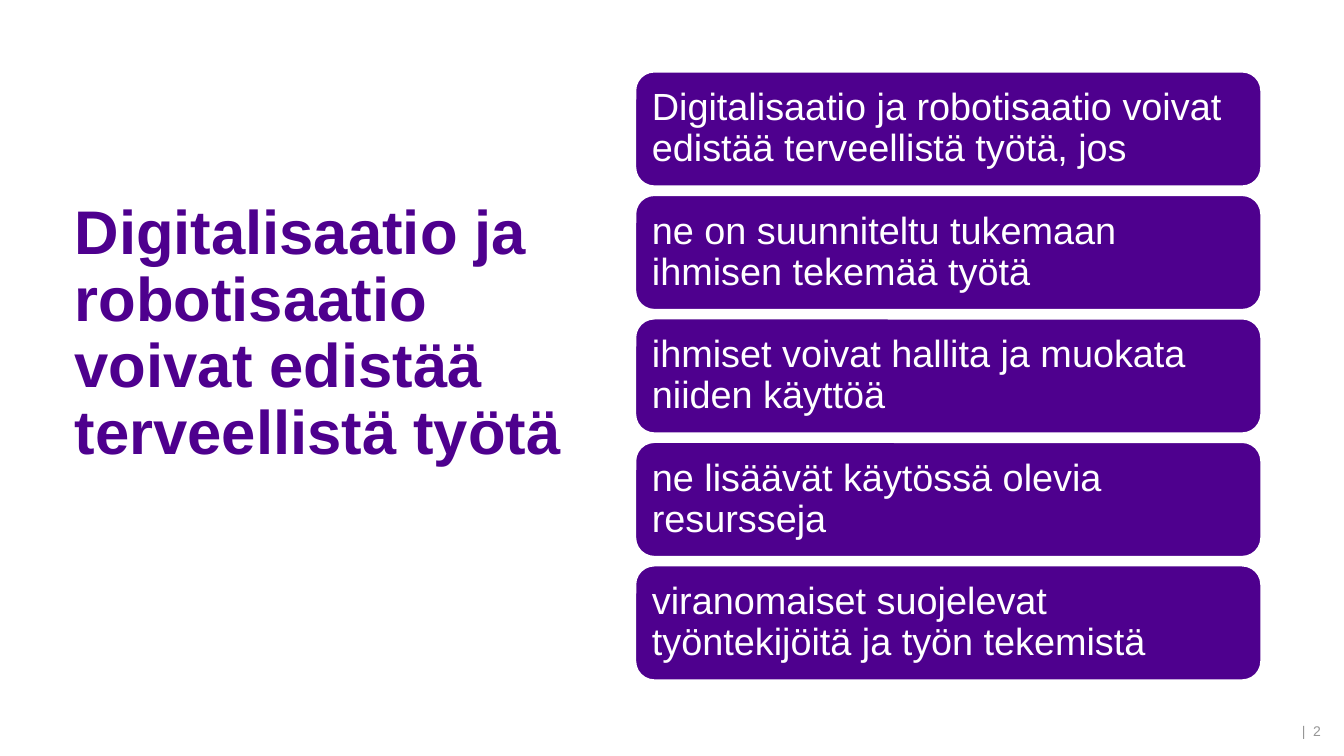
from pptx import Presentation
from pptx.dml.color import RGBColor
from pptx.enum.shapes import MSO_SHAPE
from pptx.enum.text import MSO_ANCHOR, MSO_AUTO_SIZE, PP_ALIGN
from pptx.util import Inches, Pt

TITLE = "Digitalisaatio ja robotisaatio voivat edistää terveellistä työtä"
CONDITIONS = [
    "Digitalisaatio ja robotisaatio voivat edistää terveellistä työtä, jos",
    "ne on suunniteltu tukemaan ihmisen tekemää työtä",
    "ihmiset voivat hallita ja muokata niiden käyttöä",
    "ne lisäävät käytössä olevia resursseja",
    "viranomaiset suojelevat työntekijöitä ja työn tekemistä",
]
PAGE_NUMBER = "|  2"
COLORS = {"purple": "4E008E", "white": "FFFFFF", "gray": "969696"}
FONT = "Arial"

# Card column, in inches
LEFT, TOP, WIDTH, HEIGHT, PITCH = 6.3, 0.71, 6.21, 1.14, 1.225


def color(name):
    return RGBColor.from_string(COLORS[name])


def write(tf, text, size, color_name, align, anchor, bold=False):
    tf.word_wrap = True
    tf.auto_size = MSO_AUTO_SIZE.NONE
    tf.vertical_anchor = anchor
    tf.text = text
    p = tf.paragraphs[0]
    p.alignment = align
    font = p.runs[0].font
    font.name, font.size, font.bold = FONT, Pt(size), bold
    font.color.rgb = color(color_name)
    return p


def set_margins(tf, left, top, right, bottom):
    tf.margin_left, tf.margin_top = Inches(left), Inches(top)
    tf.margin_right, tf.margin_bottom = Inches(right), Inches(bottom)


prs = Presentation()
prs.slide_width, prs.slide_height = Inches(13.33), Inches(7.5)
s = prs.slides.add_slide(prs.slide_layouts[5])

# Title
title = s.shapes.title
title.left, title.top = Inches(0.64), Inches(1.25)
title.width, title.height = Inches(5.31), Inches(3.44)
p = write(title.text_frame, TITLE, 44, "purple", PP_ALIGN.LEFT,
          MSO_ANCHOR.BOTTOM, bold=True)
p.line_spacing = 0.9

# Condition cards
for i, text in enumerate(CONDITIONS):
    card = s.shapes.add_shape(
        MSO_SHAPE.ROUNDED_RECTANGLE, Inches(LEFT), Inches(TOP + i * PITCH),
        Inches(WIDTH), Inches(HEIGHT))
    card.shadow.inherit = False
    card.fill.solid()
    card.fill.fore_color.rgb = color("purple")
    card.line.color.rgb = color("white")
    card.line.width = Pt(1.5)
    set_margins(card.text_frame, 0.11, 0.11, 0.11, 0.11)
    p = write(card.text_frame, text, 27, "white", PP_ALIGN.LEFT,
              MSO_ANCHOR.MIDDLE)
    p.line_spacing = 0.9

# Page number
number = s.shapes.add_textbox(Inches(12.79), Inches(7.1), Inches(0.41), Inches(0.28))
set_margins(number.text_frame, 0, 0.05, 0.1, 0.05)
p = write(number.text_frame, PAGE_NUMBER, 10, "gray", PP_ALIGN.RIGHT,
          MSO_ANCHOR.BOTTOM)
p.space_after = Pt(6)

prs.save("out.pptx")
